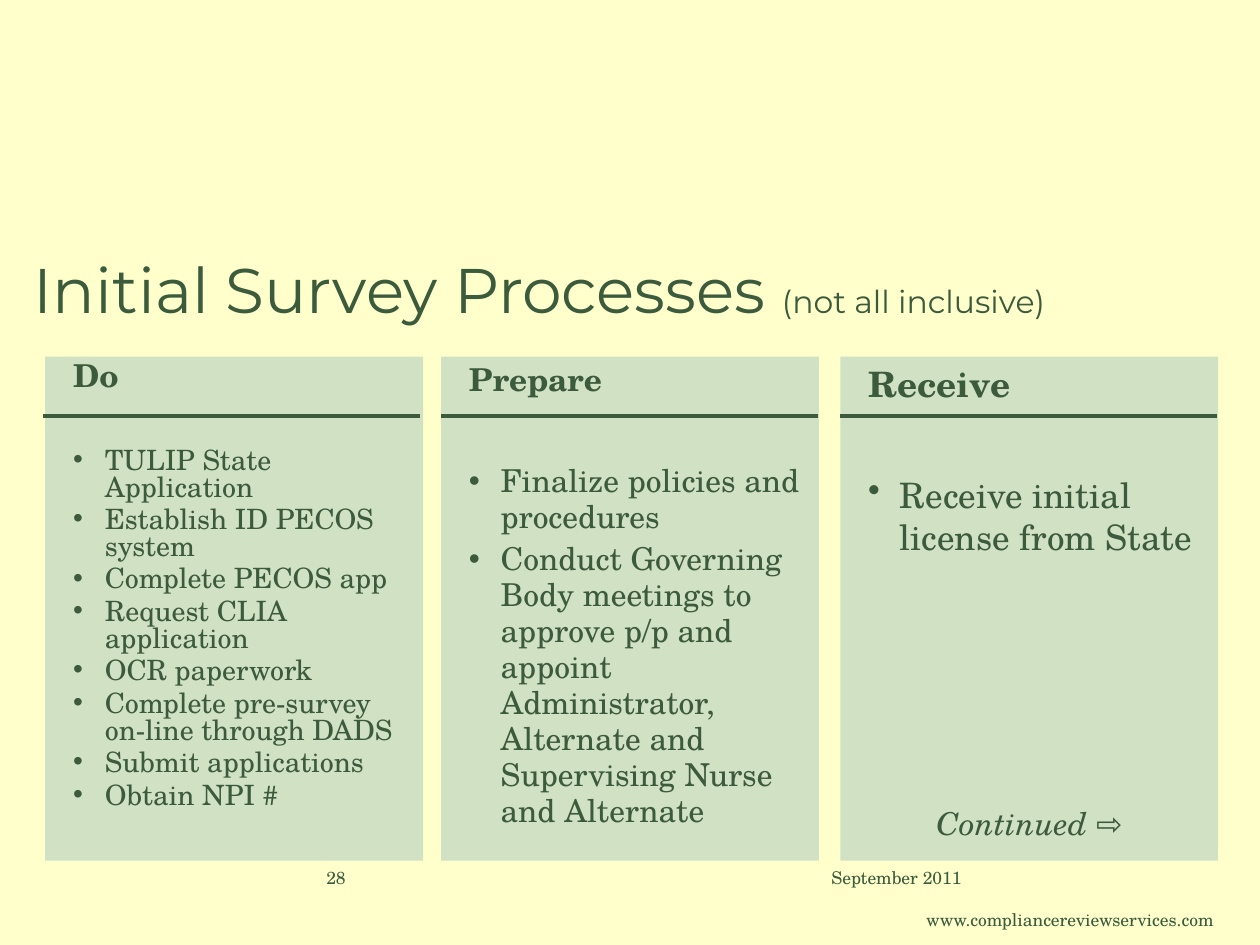
from lxml import etree
from pptx import Presentation
from pptx import util as u
from pptx.dml.color import RGBColor
from pptx.enum import shapes, text
from pptx.oxml.ns import qn

HUES = {"page": "FFFFCC", "ink": "3C5A3C", "card": "D1E1C4"}
SERIF, SANS, PLAIN = "TeX Gyre Schola", "Montserrat", "Arial"
LEFT, RIGHT, MID = text.PP_ALIGN.LEFT, text.PP_ALIGN.RIGHT, text.PP_ALIGN.CENTER

COLS = [
    {"x": 0.91, "rule": 0.86, "head": "Do", "big": 18, "size": 16,
     "lead": 0.8, "gap": 28.5, "items": [
         "TULIP State Application", "Establish ID PECOS system",
         "Complete PECOS app", "Request CLIA application",
         "OCR paperwork", "Complete pre-survey on-line through DADS",
         "Submit applications", "Obtain NPI #"]},
    {"x": 8.89, "rule": 8.89, "head": "Prepare", "big": 18, "size": 18,
     "lead": 0.95, "gap": 33.5, "items": [
         "Finalize policies and procedures",
         "Conduct Governing Body meetings to approve p/p and appoint "
         "Administrator, Alternate and Supervising Nurse and Alternate"]},
    {"x": 16.94, "rule": 16.94, "head": "Receive", "big": 20, "size": 20,
     "lead": 1.0, "gap": 35, "items": ["Receive initial license from State"]},
]


class Deck:
    def __init__(self):
        self.prs = Presentation()
        self.prs.slide_width, self.prs.slide_height = u.Cm(25.4), u.Cm(19.05)
        self.slide = self.prs.slides.add_slide(self.prs.slide_layouts[3])
        self.paint(self.slide.background, "page")

    def paint(self, item, hue):
        item.fill.solid()
        item.fill.fore_color.rgb = RGBColor.from_string(HUES[hue])

    def place(self, shape, box):
        for name, val in zip(("left", "top", "width", "height"), box):
            setattr(shape, name, u.Cm(val))

    def frame(self, shape, anchor=text.MSO_ANCHOR.TOP):
        form = {"word_wrap": True, "auto_size": text.MSO_AUTO_SIZE.NONE,
                "vertical_anchor": anchor}
        for name, val in form.items():
            setattr(shape.text_frame, name, val)
        return shape.text_frame

    def para(self, frame, runs, first=False, bullet=None, **form):
        par = frame.paragraphs[0] if first else frame.add_paragraph()
        props = par._p.get_or_add_pPr()
        if bullet is not None:
            props.set("marL", str(u.Cm(0.95)))
            props.set("indent", str(-u.Cm(0.64)))
            mark = etree.SubElement(props, qn("a:buChar" if bullet else "a:buNone"))
            if bullet:
                mark.set("char", bullet)
        base = {"alignment": LEFT, "space_before": u.Pt(0)}
        for name, val in {**base, **form}.items():
            setattr(par, name, val)
        for words, style in runs:
            run = par.add_run()
            run.text = words
            base = {"name": SERIF, "bold": False, "italic": False}
            for name, val in {**base, **style}.items():
                setattr(run.font, name, u.Pt(val) if name == "size" else val)
            run.font.color.rgb = RGBColor.from_string(HUES["ink"])

    def title(self, box, runs):
        shape = self.slide.shapes.title
        self.place(shape, box)
        self.para(self.frame(shape, text.MSO_ANCHOR.MIDDLE), runs, True)

    def card(self, col, holder=None):
        box = (col["x"], 7.19, 7.62, 10.16)
        shape = holder
        if shape is None:
            shape = self.slide.shapes.add_shape(
                shapes.MSO_SHAPE.RECTANGLE, *map(u.Cm, box))
            shape.shadow.inherit = False
            shape.line.fill.background()
        self.place(shape, box)
        self.paint(shape, "card")
        frame = self.frame(shape)
        lead, size = col["lead"], col["size"]
        self.para(frame, [(col["head"], {"size": col["big"], "bold": True})],
                  True, "", line_spacing=lead, space_after=u.Pt(col["gap"]))
        for item in col["items"]:
            self.para(frame, [(item, {"size": size})], bullet="•",
                      line_spacing=lead, space_before=u.Pt(size * 0.2))

    def rule(self, x, y, wide):
        line = self.slide.shapes.add_connector(
            shapes.MSO_CONNECTOR.STRAIGHT, *map(u.Cm, (x, y, x + wide, y)))
        line.line.width = u.Pt(2.25)
        line.line.color.rgb = RGBColor.from_string(HUES["ink"])
        etree.SubElement(line._element.spPr, qn("a:effectLst"))

    def note(self, box, *rows):
        frame = self.frame(self.slide.shapes.add_textbox(*map(u.Cm, box)))
        for num, (runs, form) in enumerate(rows):
            self.para(frame, runs, num == 0, **form)


def main():
    deck = Deck()
    deck.title((0.43, 4.45, 24.33, 2.74), [
        ("Initial Survey Processes ", {"size": 36, "name": SANS}),
        ("(not all inclusive)", {"size": 18, "name": SANS})])
    bodies = list(deck.slide.placeholders)[1:]
    for col, body in zip(COLS, bodies + [None]):
        deck.card(col, body)
    for col in COLS:
        deck.rule(col["rule"], 8.38, 7.6)
    deck.note((17.68, 16.08, 6.15, 1.02), (
        [("Continued ", {"size": 18, "italic": True}),
         ("⇨", {"size": 18, "name": PLAIN})], {"alignment": MID}))
    small = {"size": 10}
    deck.note((16.51, 17.35, 8.2, 1.27),
              ([("September 2011", small)], {}),
              ([("www.compliancereviewservices.com", small)],
               {"alignment": RIGHT, "space_before": u.Pt(12)}))
    deck.note((3.61, 17.35, 3.61, 1.27), ([("28", small)], {"alignment": RIGHT}))
    deck.prs.save("out.pptx")


if __name__ == "__main__":
    main()
